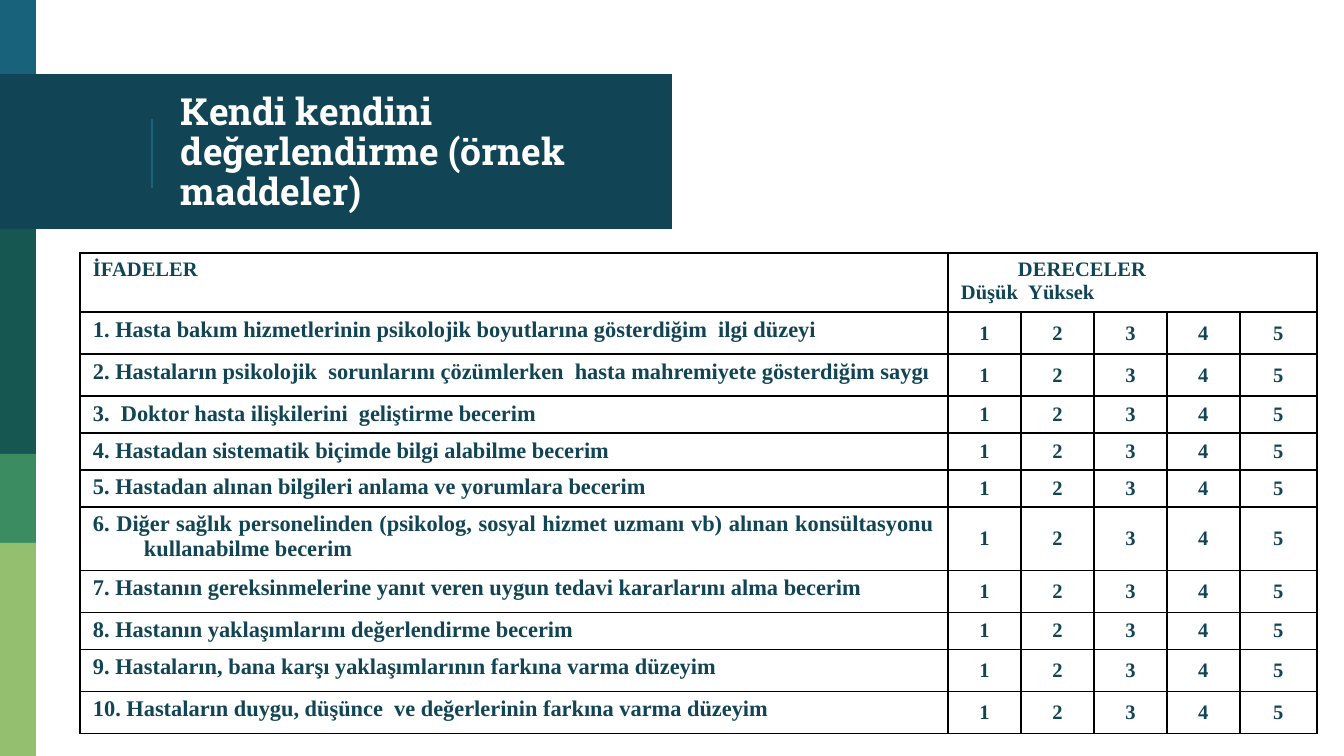
from dataclasses import dataclass

from lxml import etree
from pptx import Presentation
from pptx.dml.color import RGBColor
from pptx.enum.shapes import MSO_CONNECTOR, MSO_SHAPE
from pptx.enum.text import MSO_ANCHOR, PP_ALIGN
from pptx.oxml.ns import qn
from pptx.util import Pt

RECTANGLE = MSO_SHAPE.RECTANGLE
STRAIGHT = MSO_CONNECTOR.STRAIGHT
TOP, MIDDLE = MSO_ANCHOR.TOP, MSO_ANCHOR.MIDDLE
LEFT, CENTER, JUSTIFY = PP_ALIGN.LEFT, PP_ALIGN.CENTER, PP_ALIGN.JUSTIFY


@dataclass(frozen=True)
class Theme:
    ink: str = "114454"
    blue: str = "18637B"
    white: str = "FFFFFF"
    border: str = "000000"
    title_font: str = "Roboto Slab"
    table_font: str = "Times New Roman"
    title_size: int = 20
    item_size: int = 12
    grade_size: int = 11


THEME = Theme()

# Content
TITLE = "Kendi kendini değerlendirme (örnek maddeler)"
STATEMENTS_HEADING = "İFADELER"
GRADES_HEADING = "DERECELER"
GRADES_RANGE = "Düşük\tYüksek"
GRADES = ("1", "2", "3", "4", "5")
ITEMS = [  # statement, row height
    ("1. Hasta bakım hizmetlerinin psikolojik boyutlarına gösterdiğim  ilgi düzeyi", 42),
    ("2. Hastaların psikolojik  sorunlarını çözümlerken  hasta mahremiyete gösterdiğim saygı", 42),
    ("3.  Doktor hasta ilişkilerini  geliştirme becerim", 35),
    ("4. Hastadan sistematik biçimde bilgi alabilme becerim", 35),
    ("5. Hastadan alınan bilgileri anlama ve yorumlara becerim", 35),
    ("6. Diğer sağlık personelinden (psikolog, sosyal hizmet uzmanı vb) alınan "
     "konsültasyonu kullanabilme becerim", 60),
    ("7. Hastanın gereksinmelerine yanıt veren uygun tedavi kararlarını alma becerim", 42),
    ("8. Hastanın yaklaşımlarını değerlendirme becerim", 35),
    ("9. Hastaların, bana karşı yaklaşımlarının farkına varma düzeyim", 42),
    ("10. Hastaların duygu, düşünce  ve değerlerinin farkına varma düzeyim", 42),
]

# Layout in px
SLIDE_WIDTH, SLIDE_HEIGHT = 1344, 756
SCALE = 9144000 / SLIDE_WIDTH
BLOCKS = [  # left, top, width, height, colour
    (0, 0, 36, 78, THEME.blue),
    (0, 74, 672, 155, THEME.ink),
    (0, 229, 36, 225, "165751"),
    (0, 454, 36, 89, "3B8D61"),
    (0, 543, 36, 213, "94BF6E"),
]
DIVIDER = (152, 119, 152, 188)
TITLE_BOX = (168, 78, 472, 151)
TITLE_INSET = 13
TABLE_LEFT, TABLE_TOP = 80, 253
COLUMN_WIDTHS = (868, 73, 73, 73, 73, 77)
HEADER_HEIGHT = 56
CELL_INSET_X, CELL_INSET_Y = 13, 5
HANGING = 51
GRADES_HEADING_INDENT = 57
HIGH_TAB = 155


def px(value):
    return round(value * SCALE)


def format_runs(paragraph, font_name, size, color):
    for run in paragraph.runs:
        run.font.name = font_name
        run.font.size = Pt(size)
        run.font.bold = True
        run.font.color.rgb = RGBColor.from_string(color)


def set_insets(target, horizontal, vertical):
    target.margin_left = target.margin_right = px(horizontal)
    target.margin_top = target.margin_bottom = px(vertical)


def set_indent(paragraph, margin, first_line):
    properties = paragraph._p.get_or_add_pPr()
    properties.set("marL", str(px(margin)))
    properties.set("indent", str(px(first_line)))
    return properties


def style_cell(cell):
    set_insets(cell, CELL_INSET_X, CELL_INSET_Y)
    properties = cell._tc.get_or_add_tcPr()
    for side in ("a:lnL", "a:lnR", "a:lnT", "a:lnB"):
        line = etree.SubElement(properties, qn(side), w=str(Pt(1)))
        solid = etree.SubElement(line, qn("a:solidFill"))
        etree.SubElement(solid, qn("a:srgbClr"), val=THEME.border)
    cell.fill.background()


def write_cell(cell, text, size, alignment, anchor=TOP):
    cell.text_frame.text = text
    cell.vertical_anchor = anchor
    for paragraph in cell.text_frame.paragraphs:
        paragraph.alignment = alignment
        format_runs(paragraph, THEME.table_font, size, THEME.ink)


def add_background(slide):
    for left, top, width, height, color in BLOCKS:
        block = slide.shapes.add_shape(RECTANGLE, px(left), px(top), px(width), px(height))
        block.shadow.inherit = False
        block.fill.solid()
        block.fill.fore_color.rgb = RGBColor.from_string(color)
        block.line.fill.background()
    divider = slide.shapes.add_connector(STRAIGHT, *map(px, DIVIDER))
    divider.line.color.rgb = RGBColor.from_string(THEME.blue)
    divider.line.width = Pt(0.75)
    etree.SubElement(divider._element.spPr, qn("a:effectLst"))


def add_title(slide):
    text_frame = slide.shapes.add_textbox(*map(px, TITLE_BOX)).text_frame
    text_frame.word_wrap = True
    text_frame.vertical_anchor = MIDDLE
    set_insets(text_frame, TITLE_INSET, TITLE_INSET)
    text_frame.text = TITLE
    paragraph = text_frame.paragraphs[0]
    paragraph.line_spacing = 0.9
    format_runs(paragraph, THEME.title_font, THEME.title_size, THEME.white)


def add_rating_table(slide):
    heights = [HEADER_HEIGHT] + [height for _, height in ITEMS]
    table = slide.shapes.add_table(
        len(heights), len(COLUMN_WIDTHS), px(TABLE_LEFT), px(TABLE_TOP),
        px(sum(COLUMN_WIDTHS)), px(sum(heights))).table
    table.first_row = table.horz_banding = False
    for column, width in zip(table.columns, COLUMN_WIDTHS):
        column.width = px(width)
    for row, height in zip(table.rows, heights):
        row.height = px(height)
    for cell in table.iter_cells():
        style_cell(cell)

    # Header row
    write_cell(table.cell(0, 0), STATEMENTS_HEADING, THEME.grade_size, JUSTIFY)
    grades_header = table.cell(0, 1)
    grades_header.merge(table.cell(0, len(GRADES)))
    write_cell(grades_header, GRADES_HEADING + "\n" + GRADES_RANGE, THEME.grade_size, LEFT)
    heading, grade_range = grades_header.text_frame.paragraphs
    set_indent(heading, GRADES_HEADING_INDENT, 0)
    tabs = etree.SubElement(set_indent(grade_range, 0, 0), qn("a:tabLst"))
    etree.SubElement(tabs, qn("a:tab"), pos=str(px(HIGH_TAB)), algn="l")

    # Statements with their grades
    for row, (statement, _) in enumerate(ITEMS, start=1):
        cell = table.cell(row, 0)
        write_cell(cell, statement, THEME.item_size, JUSTIFY)
        set_indent(cell.text_frame.paragraphs[0], HANGING, -HANGING)
        for column, grade in enumerate(GRADES, start=1):
            write_cell(table.cell(row, column), grade, THEME.grade_size, CENTER, MIDDLE)


def main():
    presentation = Presentation()
    presentation.slide_width = px(SLIDE_WIDTH)
    presentation.slide_height = px(SLIDE_HEIGHT)
    slide = presentation.slides.add_slide(presentation.slide_layouts[6])
    add_background(slide)
    add_title(slide)
    add_rating_table(slide)
    presentation.save("out.pptx")


if __name__ == "__main__":
    main()
